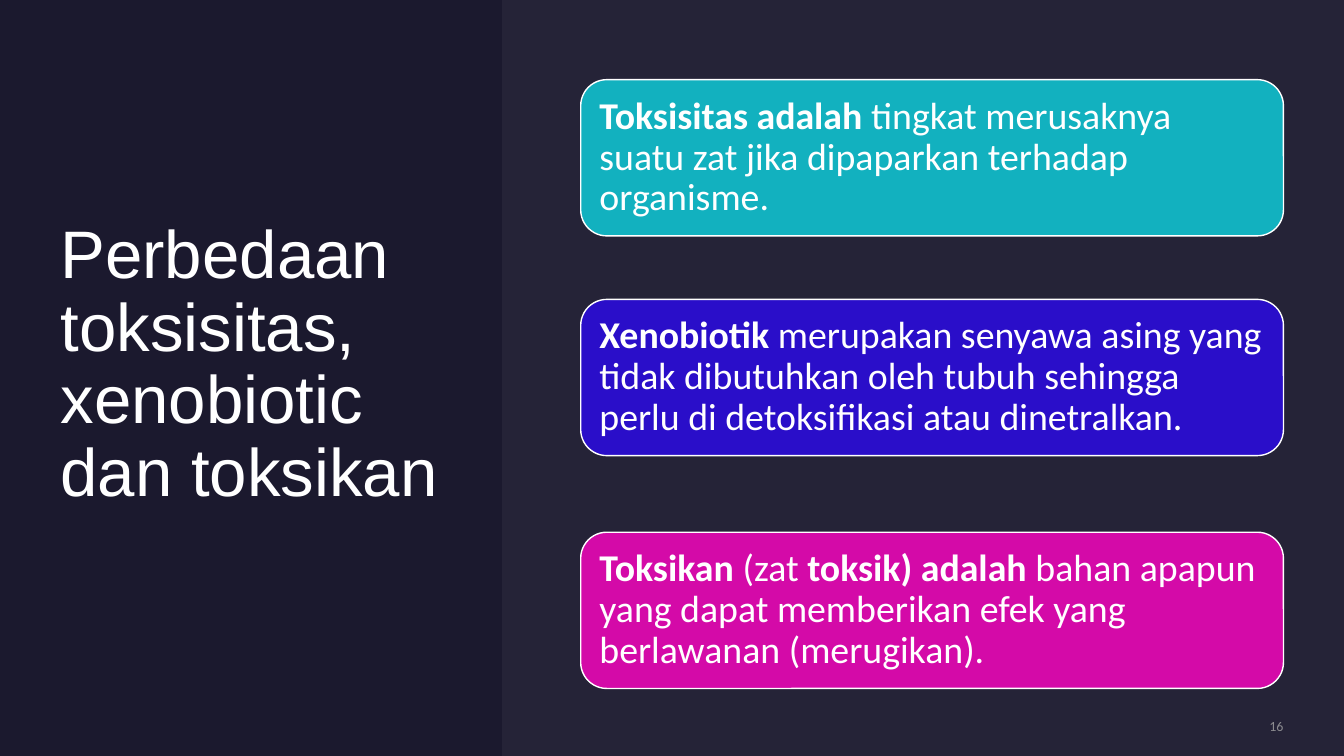
from dataclasses import dataclass

from lxml import etree
from pptx import Presentation
from pptx import util as u
from pptx.dml.color import RGBColor
from pptx.enum import shapes, text
from pptx.oxml.ns import qn

# Content: each card is a list of (words, bold) runs
TITLE = "Perbedaan toksisitas, xenobiotic dan toksikan"
PAGE_NUMBER = "16"
CARDS = [
    [("Toksisitas adalah ", True),
     ("tingkat merusaknya suatu zat jika dipaparkan terhadap organisme.", False)],
    [("Xenobiotik", True),
     (" merupakan senyawa asing yang tidak dibutuhkan oleh tubuh sehingga "
      "perlu di detoksifikasi atau dinetralkan.", False)],
    [("Toksikan", True), (" (zat ", False), ("toksik) adalah", True),
     (" bahan apapun yang dapat memberikan efek yang berlawanan (merugikan).", False)],
]


@dataclass(frozen=True)
class Theme:
    background: str = "1B192E"
    panel: str = "E4E3F0"
    panel_opacity: int = 5
    white: str = "FFFFFF"
    number: str = "A6A6A6"
    number_opacity: int = 80
    cards: tuple = ("12B1BF", "2A0EC9", "D40AA8")
    title_font: str = "Arial"
    body_font: str = "Calibri"
    title_size: int = 48
    card_size: int = 27
    number_size: int = 10


THEME = Theme()

# Layout in inches
WIDTH, HEIGHT = 13.33, 7.5
MARGIN = 0.6
PANEL_LEFT = 4.98
CARD_LEFT, CARD_WIDTH, CARD_HEIGHT = 5.76, 6.97, 1.55
CARD_TOPS = (0.79, 2.97, 5.28)
CARD_INSET = 0.11
NUMBER_WIDTH, NUMBER_TOP, NUMBER_HEIGHT = 1.85, 7.12, 0.17


def box(*lengths):
    return [u.Inches(length) for length in lengths]


def paint(fill, color, opacity=100):
    """Fill with a solid colour, optionally see-through."""
    fill.solid()
    fill.fore_color.rgb = RGBColor.from_string(color)
    if opacity < 100:
        for node in fill._xPr.iter(qn("a:srgbClr")):
            etree.SubElement(node, qn("a:alpha"), val=str(opacity * 1000))


def set_frame(shape, inset=0):
    frame = shape.text_frame
    frame.word_wrap = True
    frame.auto_size = text.MSO_AUTO_SIZE.NONE
    frame.vertical_anchor = text.MSO_ANCHOR.MIDDLE
    frame.margin_left = frame.margin_right = u.Inches(inset)
    frame.margin_top = frame.margin_bottom = u.Inches(inset)
    return frame.paragraphs[0]


def set_font(font, name, size, color):
    font.name, font.size = name, u.Pt(size)
    font.color.rgb = RGBColor.from_string(color)


def add_title(slide):
    title = slide.shapes.title
    title.left, title.top, title.width, title.height = box(MARGIN, MARGIN, 3.9, 6.06)
    paragraph = set_frame(title)
    paragraph.text = TITLE
    paragraph.alignment = text.PP_ALIGN.LEFT
    paragraph.line_spacing = 0.9
    set_font(paragraph.font, THEME.title_font, THEME.title_size, THEME.white)


def add_panel(slide):
    panel = slide.shapes.add_shape(
        shapes.MSO_SHAPE.RECTANGLE, *box(PANEL_LEFT, 0, WIDTH - PANEL_LEFT, HEIGHT))
    panel.shadow.inherit = False
    panel.line.fill.background()
    paint(panel.fill, THEME.panel, THEME.panel_opacity)


def add_card(slide, top, color, runs):
    card = slide.shapes.add_shape(
        shapes.MSO_SHAPE.ROUNDED_RECTANGLE, *box(CARD_LEFT, top, CARD_WIDTH, CARD_HEIGHT))
    card.shadow.inherit = False
    paint(card.fill, color)
    paint(card.line.fill, THEME.white)
    card.line.width = u.Pt(1)
    paragraph = set_frame(card, CARD_INSET)
    paragraph.alignment = text.PP_ALIGN.LEFT
    paragraph.line_spacing = 0.9
    set_font(paragraph.font, THEME.body_font, THEME.card_size, THEME.white)
    for words, bold in runs:
        run = paragraph.add_run()
        run.text, run.font.bold = words, bold


def add_page_number(slide):
    left = CARD_LEFT + CARD_WIDTH - NUMBER_WIDTH
    number = slide.shapes.add_textbox(*box(left, NUMBER_TOP, NUMBER_WIDTH, NUMBER_HEIGHT))
    paragraph = set_frame(number)
    paragraph.text = PAGE_NUMBER
    paragraph.alignment = text.PP_ALIGN.RIGHT
    set_font(paragraph.font, THEME.body_font, THEME.number_size, THEME.number)
    paint(paragraph.font.fill, THEME.number, THEME.number_opacity)


def main():
    presentation = Presentation()
    presentation.slide_width, presentation.slide_height = box(WIDTH, HEIGHT)
    slide = presentation.slides.add_slide(presentation.slide_layouts[5])
    paint(slide.background.fill, THEME.background)

    add_title(slide)
    add_panel(slide)
    add_page_number(slide)
    for top, color, runs in zip(CARD_TOPS, THEME.cards, CARDS):
        add_card(slide, top, color, runs)
    presentation.save("out.pptx")


if __name__ == "__main__":
    main()
